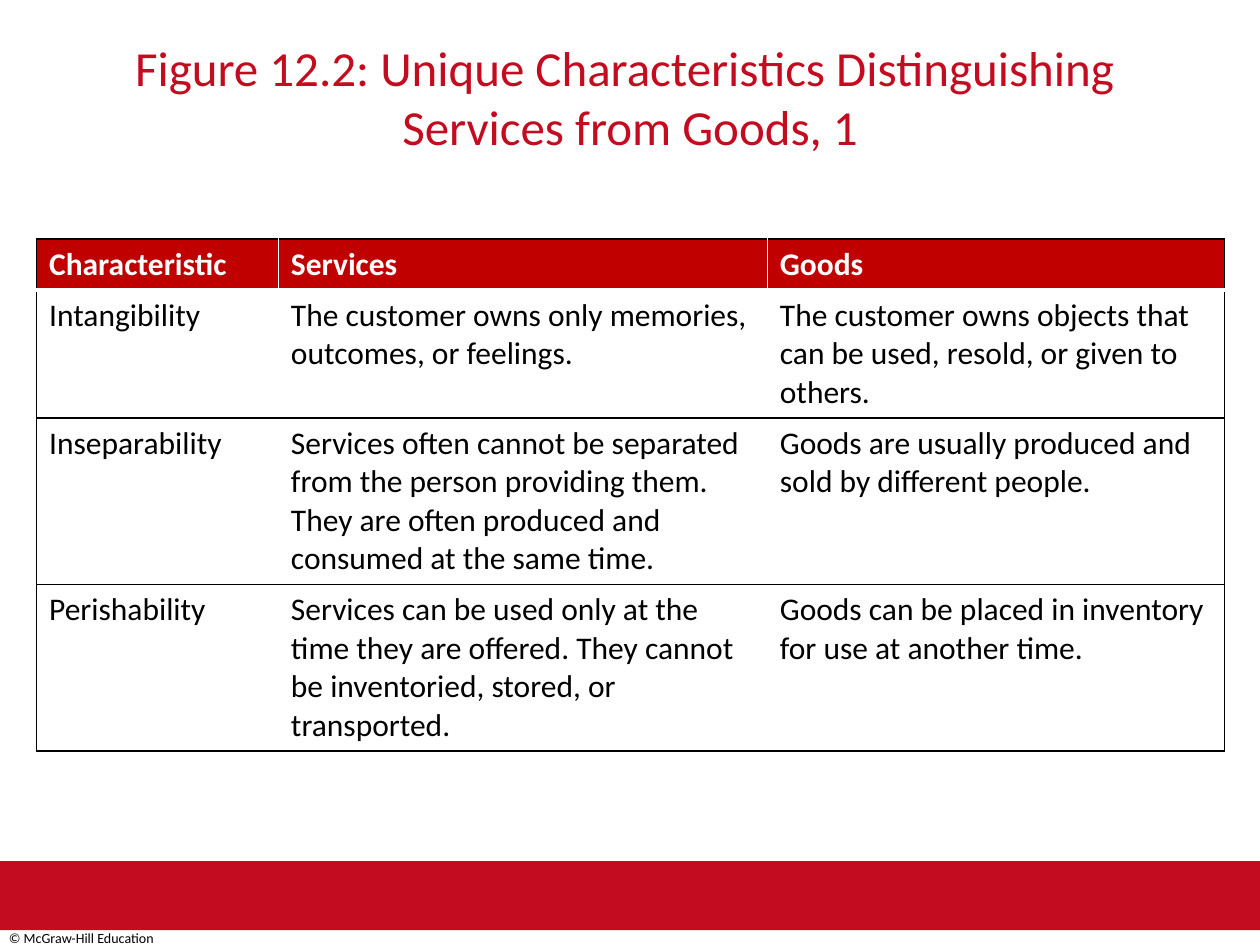
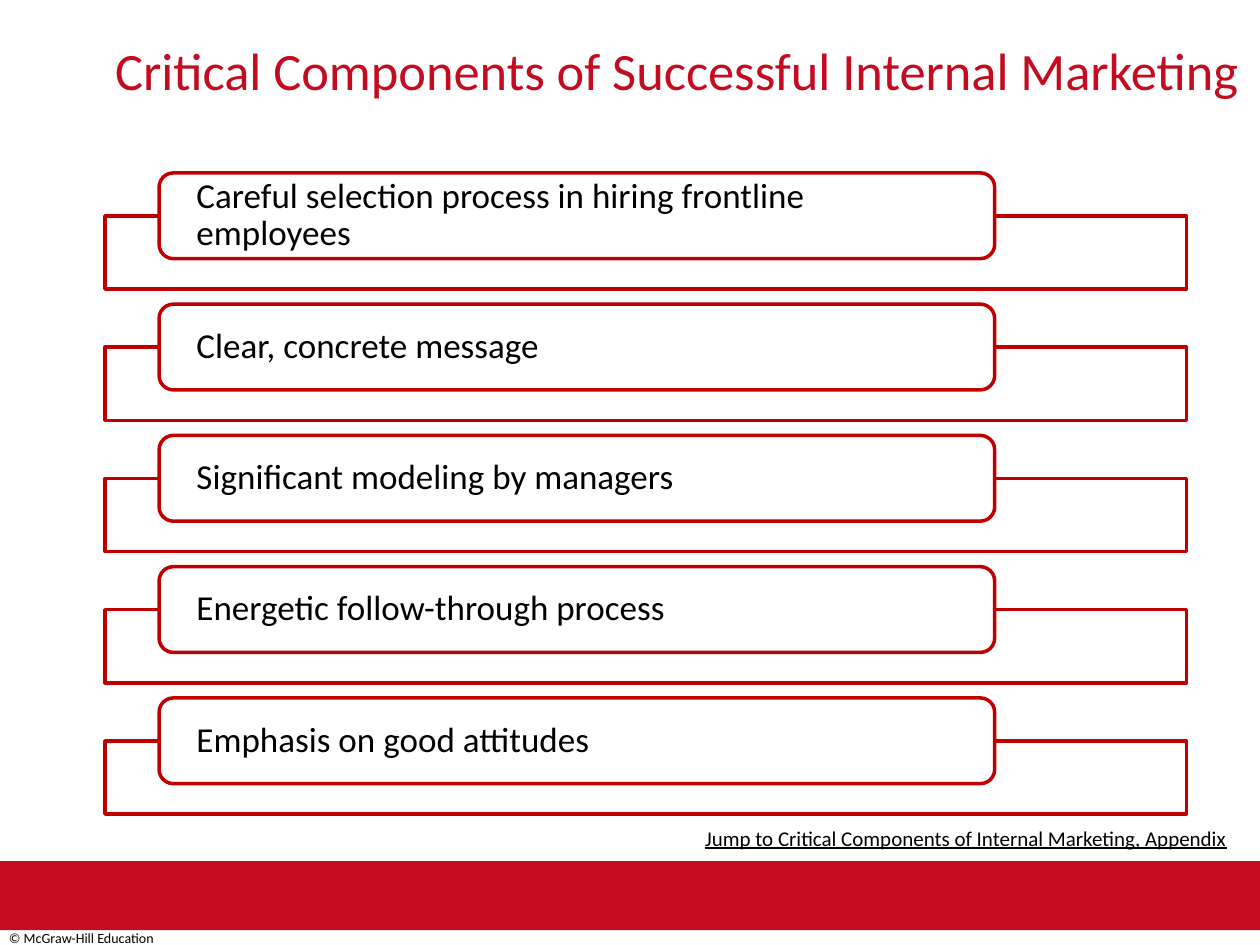
import pptx
import pptx.dml.color
import pptx.enum.shapes
import pptx.enum.text
import pptx.oxml.ns
import pptx.util
from lxml import etree

Pt = pptx.util.Pt
SHAPES = pptx.enum.shapes.MSO_SHAPE
ALIGN = pptx.enum.text.PP_ALIGN
ANCHOR = pptx.enum.text.MSO_ANCHOR
qn = pptx.oxml.ns.qn

TABLE_TITLE = "Figure 12.2: Unique Characteristics Distinguishing \vServices from Goods, 1"
COMPARISON = [
    ("Characteristic", "Services", "Goods"),
    ("Intangibility",
     "The customer owns only memories, outcomes, or feelings.",
     "The customer owns objects that can be used, resold, or given to others."),
    ("Inseparability",
     "Services often cannot be separated from the person providing them. "
     "They are often produced and consumed at the same time.",
     "Goods are usually produced and sold by different people."),
    ("Perishability",
     "Services can be used only at the time they are offered. "
     "They cannot be inventoried, stored, or transported.",
     "Goods can be placed in inventory for use at another time."),
]
COMPONENTS_TITLE = "\tCritical Components of Successful Internal Marketing"
COMPONENTS = [
    "Careful selection process in hiring frontline employees",
    "Clear, concrete message",
    "Significant modeling by managers",
    "Energetic follow-through process",
    "Emphasis on good attitudes",
]
APPENDIX_NOTE = "Jump to Critical Components of Internal Marketing, Appendix"
COPYRIGHT = "© McGraw-Hill Education"

WIDTH, HEIGHT = 720, 540
BRAND_RED, RED, BLACK, WHITE = "C30C20", "C00000", "000000", "FFFFFF"
FONT = "Calibri"
COLUMN_WIDTHS = [138.2, 279.4, 261.4]
ROW_HEIGHTS = [29.1, 73.2, 95.1, 95.1]
COMPONENT_STEP = 75


def rgb(value):
    return pptx.dml.color.RGBColor.from_string(value)


def place(left, top, width, height):
    return [Pt(length) for length in (left, top, width, height)]


def write(frame, text, color=BLACK, align=ALIGN.LEFT, **font_format):
    """Fill a text frame with one formatted paragraph and return it."""
    frame.word_wrap = True
    para = frame.paragraphs[0]
    para.text = text
    para.alignment = align
    for span in para.runs:
        span.font.name = FONT
        span.font.color.rgb = rgb(color)
        for name, value in font_format.items():
            setattr(span.font, name, value)
    return para


def add_text(page, area, text, **text_format):
    box = page.shapes.add_textbox(*place(*area))
    return write(box.text_frame, text, **text_format)


def add_box(page, kind, area, fill, line=None):
    box = page.shapes.add_shape(kind, *place(*area))
    box.shadow.inherit = False
    box.fill.solid()
    box.fill.fore_color.rgb = rgb(fill)
    if line:
        box.line.color.rgb = rgb(line)
        box.line.width = Pt(2)
    else:
        box.line.fill.background()
    return box


def add_page(deck, title, title_size, title_tab=None):
    """Add a page with the shared band, copyright line and title."""
    page = deck.slides.add_slide(deck.slide_layouts[6])
    add_box(page, SHAPES.RECTANGLE, (0, 492, WIDTH, 39.5), BRAND_RED)
    add_text(page, (-2, 527.8, 360, 17), COPYRIGHT, size=Pt(8))
    para = add_text(page, (0, 18, WIDTH, 48), title, color=BRAND_RED,
                    align=ALIGN.CENTER, size=Pt(title_size))
    if title_tab:
        tabs = etree.SubElement(para._p.get_or_add_pPr(), qn("a:tabLst"))
        etree.SubElement(tabs, qn("a:tab"), pos=str(Pt(title_tab)), algn="l")
    return page


def set_borders(cell, borders):
    """Draw the sides in order; borders maps L, R, T, B to (colour, width)."""
    properties = cell._tc.get_or_add_tcPr()
    for index, (side, (color, width)) in enumerate(borders.items()):
        line = etree.Element(qn(f"a:ln{side}"), w=str(Pt(width)))
        fill = etree.SubElement(line, qn("a:solidFill"))
        etree.SubElement(fill, qn("a:srgbClr"), val=color)
        properties.insert(index, line)


def add_comparison(page):
    rows, columns = len(COMPARISON), len(COLUMN_WIDTHS)
    area = (20.9, 136.6, sum(COLUMN_WIDTHS), sum(ROW_HEIGHTS))
    table = page.shapes.add_table(rows, columns, *place(*area)).table
    table.horz_banding = False
    for column, width in zip(table.columns, COLUMN_WIDTHS):
        column.width = Pt(width)
    for row, height in zip(table.rows, ROW_HEIGHTS):
        row.height = Pt(height)
    for r, texts in enumerate(COMPARISON):
        header = r == 0
        for c, text in enumerate(texts):
            cell = table.cell(r, c)
            write(cell.text_frame, text, color=WHITE if header else BLACK,
                  size=Pt(18), bold=header)
            if header:
                cell.fill.solid()
                cell.fill.fore_color.rgb = rgb(RED)
            else:
                cell.fill.background()
            set_borders(cell, {
                "L": (BLACK if c == 0 else WHITE, 1),
                "R": (BLACK if c == columns - 1 else WHITE, 1),
                "T": (WHITE if r == 1 else BLACK, 1),
                "B": (WHITE, 3) if header else (BLACK, 1),
            })


def add_components(page):
    for index, text in enumerate(COMPONENTS):
        top = 98.8 + index * COMPONENT_STEP
        add_box(page, SHAPES.RECTANGLE, (60, top + 24.6, 618, 41.8), WHITE, RED)
        label = add_box(page, SHAPES.ROUNDED_RECTANGLE,
                        (90.9, top, 477.5, 49), WHITE, RED)
        frame = label.text_frame
        frame.margin_left = frame.margin_right = Pt(19)
        frame.margin_top = frame.margin_bottom = 0
        frame.vertical_anchor = ANCHOR.MIDDLE
        write(frame, text, size=Pt(20)).line_spacing = 0.9


def main():
    deck = pptx.Presentation()
    deck.slide_width, deck.slide_height = Pt(WIDTH), Pt(HEIGHT)
    add_comparison(add_page(deck, TABLE_TITLE, 28))
    page = add_page(deck, COMPONENTS_TITLE, 30, title_tab=54)
    add_text(page, (60, 468, 648, 30), APPENDIX_NOTE, align=ALIGN.RIGHT,
             size=Pt(12), underline=True)
    add_components(page)
    deck.save("out.pptx")


if __name__ == "__main__":
    main()
